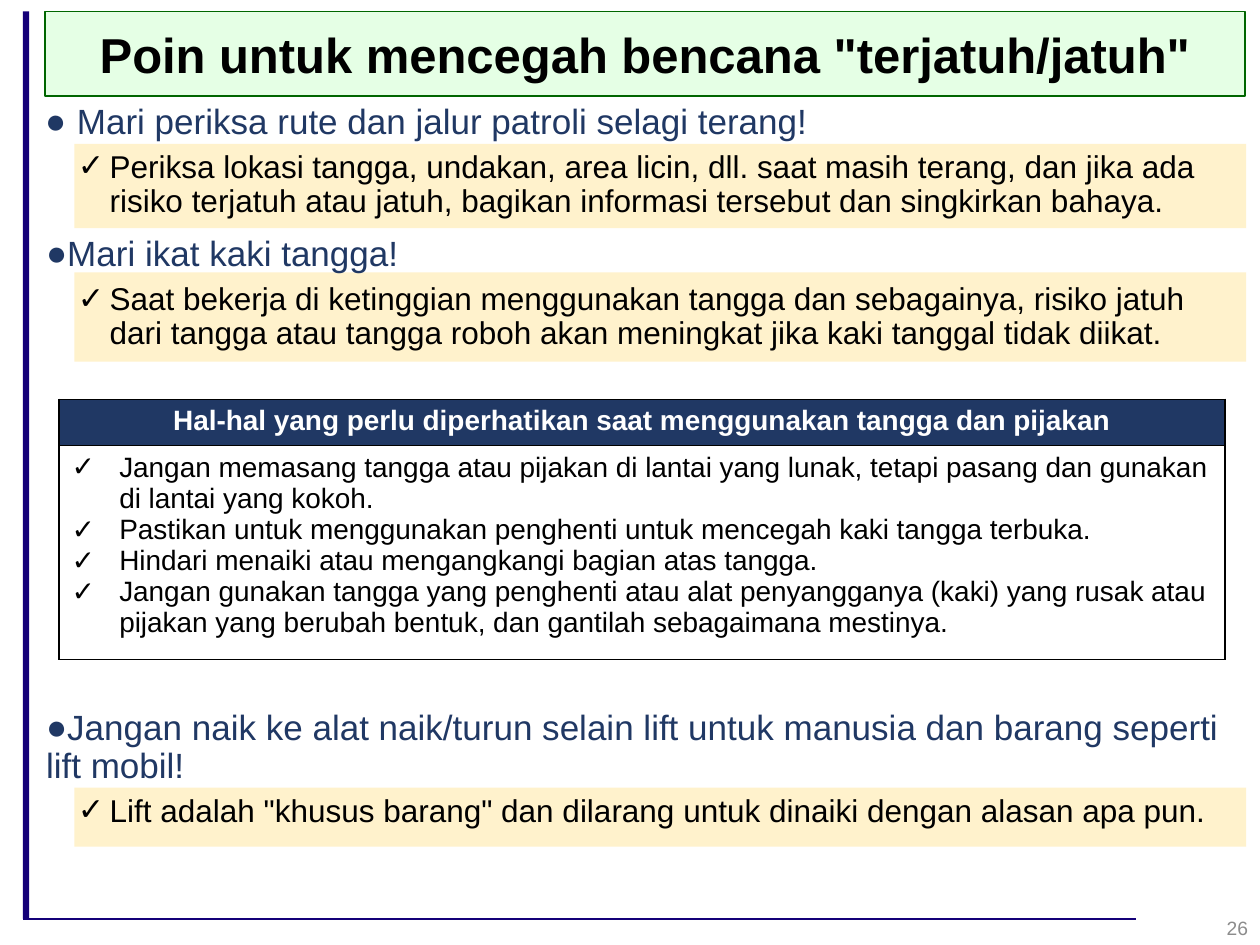
import pptx
import pptx.util
import pptx.dml.color
import pptx.enum.shapes
import pptx.enum.text
import pptx.oxml
import pptx.oxml.ns
import lxml.etree

Cm = pptx.util.Cm
Pt = pptx.util.Pt
ALIGN = pptx.enum.text.PP_ALIGN
ANCHOR = pptx.enum.text.MSO_ANCHOR
RECTANGLE = pptx.enum.shapes.MSO_SHAPE.RECTANGLE
STRAIGHT = pptx.enum.shapes.MSO_CONNECTOR.STRAIGHT
qn = pptx.oxml.ns.qn

COLORS = {
    "rule": "140078", "band": "FFF2CC", "title_fill": "CCFFCC",
    "title_line": "006600", "navy": "203864", "black": "000000",
    "white": "FFFFFF", "gray": "8C8C8C",
}


def rgb(name):
    return pptx.dml.color.RGBColor.from_string(COLORS[name])


def write(para, text, color, font, layout, bullet=None, left=0, hang=0):
    span = para.add_run()
    span.text = text
    for name, value in {"name": "Arial", "bold": False, **font}.items():
        setattr(span.font, name, value)
    span.font.color.rgb = rgb(color)
    for name, value in layout.items():
        setattr(para, name, value)
    if bullet:
        props = para._p.get_or_add_pPr()
        props.set("marL", str(Cm(left)))
        props.set("indent", str(Cm(-hang)))
        lxml.etree.SubElement(props, qn("a:buFont")).set("typeface", "Arial")
        lxml.etree.SubElement(props, qn("a:buChar")).set("char", bullet)


deck = pptx.Presentation()
deck.slide_width = Cm(25.4)
deck.slide_height = Cm(19.05)
page = deck.slides.add_slide(deck.slide_layouts[5])

blocks = [
    (0.46, 0.23, 0.13, 18.29, "rule"),
    (1.5, 15.88, 23.62, 1.19, "band"),
    (1.5, 5.49, 23.62, 1.8, "band"),
    (1.5, 2.9, 23.62, 1.7, "band"),
]
for left, top, width, height, color in blocks:
    block = page.shapes.add_shape(RECTANGLE, Cm(left), Cm(top), Cm(width), Cm(height))
    block.shadow.inherit = False
    block.fill.solid()
    block.fill.fore_color.rgb = rgb(color)
    block.line.fill.background()

footer_rule = page.shapes.add_connector(STRAIGHT, Cm(0.46), Cm(18.52), Cm(22.91), Cm(18.52))
footer_rule.line.color.rgb = rgb("rule")
footer_rule.line.width = Pt(1)
lxml.etree.SubElement(footer_rule._element.spPr, qn("a:effectLst"))

title = page.shapes.title
title_place = {"left": Cm(0.9), "top": Cm(0.23), "width": Cm(24.2), "height": Cm(1.7)}
for name, value in title_place.items():
    setattr(title, name, value)
title.fill.solid()
title.fill.fore_color.rgb = rgb("title_fill")
tint = title._element.spPr.find(qn("a:solidFill"))[0]
lxml.etree.SubElement(tint, qn("a:alpha")).set("val", "50000")
title.line.color.rgb = rgb("title_line")
title.line.width = Pt(1)
title.text_frame.auto_size = pptx.enum.text.MSO_AUTO_SIZE.NONE
title.text_frame.vertical_anchor = ANCHOR.MIDDLE
write(title.text_frame.paragraphs[0], 'Poin untuk mencegah bencana "terjatuh/jatuh"',
      "black", {"size": Pt(28), "bold": True}, {"alignment": ALIGN.CENTER})

styles = {
    "first": ("navy", {"size": Pt(20)}, {"line_spacing": 0.9, "space_before": Pt(10)}, "●", 0.64, 0.64),
    "point": ("navy", {"size": Pt(20)}, {"line_spacing": 0.9, "space_before": Pt(10)}, "●", 0.02, 0),
    "check": ("black", {"size": Pt(18)}, {"line_spacing": 0.9, "space_before": Pt(5)}, "✓", 1.3, 0.64),
}
sections = [
    (1.98, 5.5, [
        ("first", "Mari periksa rute dan jalur patroli selagi terang!"),
        ("check", "Periksa lokasi tangga, undakan, area licin, dll. saat masih terang, dan jika ada "
                  "risiko terjatuh atau jatuh, bagikan informasi tersebut dan singkirkan bahaya."),
        ("point", "Mari ikat kaki tangga!"),
        ("check", "Saat bekerja di ketinggian menggunakan tangga dan sebagainya, risiko jatuh dari "
                  "tangga atau tangga roboh akan meningkat jika kaki tanggal tidak diikat."),
    ]),
    (14.2, 3, [
        ("point", "Jangan naik ke alat naik/turun selain lift untuk manusia dan barang seperti lift mobil!"),
        ("check", 'Lift adalah "khusus barang" dan dilarang untuk dinaiki dengan alasan apa pun.'),
    ]),
]
for top, height, lines in sections:
    box = page.shapes.add_textbox(Cm(0.66), Cm(top), Cm(24.59), Cm(height))
    box.text_frame.word_wrap = True
    for index, (style, text) in enumerate(lines):
        para = box.text_frame.add_paragraph() if index else box.text_frame.paragraphs[0]
        write(para, text, *styles[style])

ladder_heading = "Hal-hal yang perlu diperhatikan saat menggunakan tangga dan pijakan"
ladder_rules = [
    "Jangan memasang tangga atau pijakan di lantai yang lunak, tetapi pasang dan gunakan di lantai yang kokoh.",
    "Pastikan untuk menggunakan penghenti untuk mencegah kaki tangga terbuka.",
    "Hindari menaiki atau mengangkangi bagian atas tangga.",
    "Jangan gunakan tangga yang penghenti atau alat penyangganya (kaki) yang rusak atau "
    "pijakan yang berubah bentuk, dan gantilah sebagaimana mestinya.",
]
table = page.shapes.add_table(2, 1, Cm(1.19), Cm(8.05), Cm(23.5), Cm(4.9)).table
for row, height, color in zip(table.rows, (0.88, 4.02), ("navy", "white")):
    row.height = Cm(height)
    cell = row.cells[0]
    cell.fill.solid()
    cell.fill.fore_color.rgb = rgb(color)
    props = cell._tc.get_or_add_tcPr()
    for index, side in enumerate(("lnL", "lnR", "lnT", "lnB")):
        border = lxml.etree.Element(qn("a:" + side), w=str(Pt(1)))
        fill = lxml.etree.SubElement(border, qn("a:solidFill"))
        lxml.etree.SubElement(fill, qn("a:srgbClr")).set("val", COLORS["black"])
        props.insert(index, border)

write(table.cell(0, 0).text_frame.paragraphs[0], ladder_heading, "white",
      {"size": Pt(16), "bold": True}, {"alignment": ALIGN.CENTER})
rules_frame = table.cell(1, 0).text_frame
for index, text in enumerate(ladder_rules):
    para = rules_frame.add_paragraph() if index else rules_frame.paragraphs[0]
    write(para, text, "black", {"size": Pt(16)}, {}, "✓", 0.96, 0.96)

number = page.shapes.add_textbox(Cm(19.71), Cm(18.19), Cm(5.7), Cm(1.02))
number.text_frame.word_wrap = True
number.text_frame.vertical_anchor = ANCHOR.MIDDLE
write(number.text_frame.paragraphs[0], "26", "gray", {"size": Pt(11)}, {"alignment": ALIGN.RIGHT})

deck.save("out.pptx")
